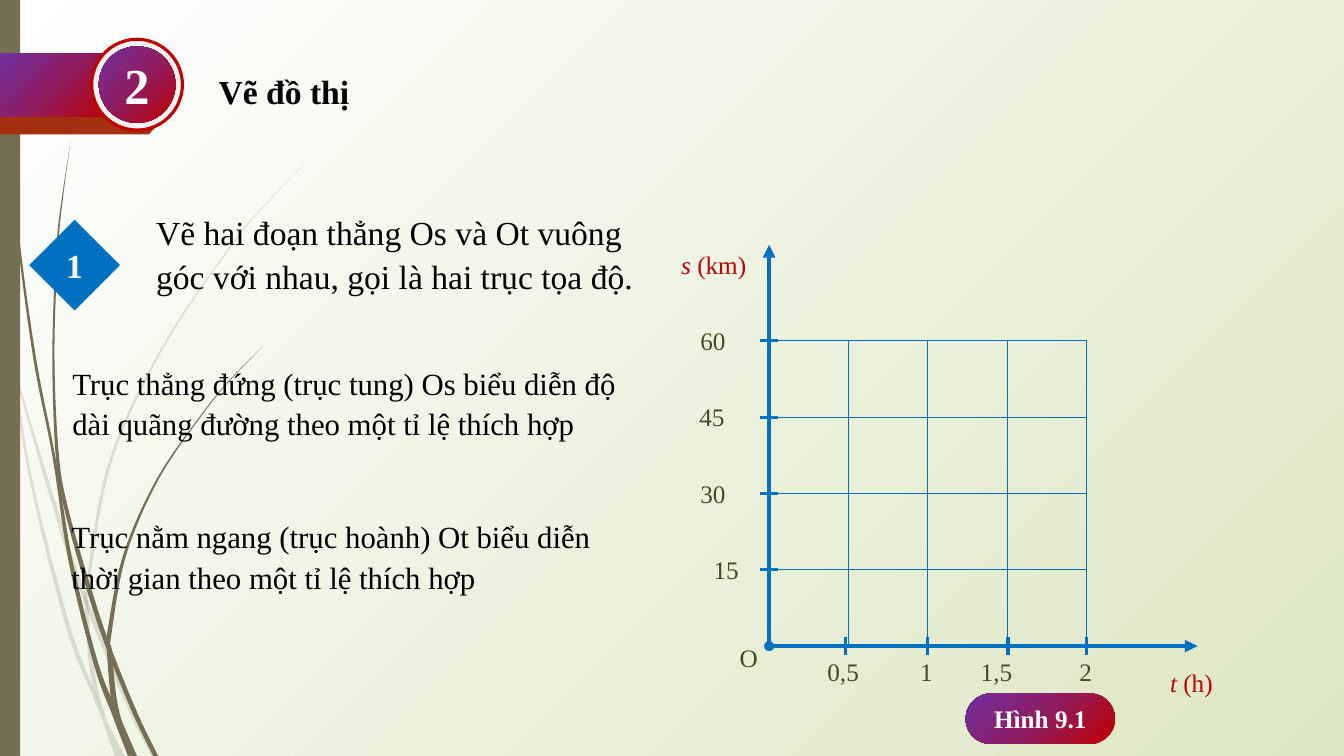
from lxml import etree
from pptx import Presentation
from pptx import util as u
from pptx.dml.color import RGBColor
from pptx.enum import shapes, text
from pptx.oxml.ns import qn

Pt = u.Pt
SHAPE = shapes.MSO_SHAPE
COLORS = {
    "stem": "766F54", "ribbon": "A53010", "blue": "0070C0", "red": "C00000",
    "plum": "8F1D62", "purple": "7030A0", "white": "FFFFFF", "pale": "F2F2F2",
    "black": "000000", "olive": "414C21", "leaf": "DDE6C3",
}
BADGE = [(0, "red"), (51, "plum"), (100, "purple")]

PALE_STEMS = [
    [(0, 203, 0), (7.5, 250, 1), (20.2, 338, 2), (46.8, 447, 3.2), (66.2, 497, 3),
     (73, 514, 3), (82, 540, 7)],
    [(10, 248, 0), (12, 271, 1), (41.8, 376, 3.3), (60.5, 431, 3.2), (88.6, 500, 3.2),
     (108, 540, 3.6)],
    [(224.6, 110, 0), (193, 142, 0.7), (164.2, 176, 1), (113.8, 251, 1.6), (77, 332, 2.2),
     (61.2, 420, 2.2), (60.5, 431, 2.6), (62.6, 465, 2.9), (67, 492, 3), (75, 512, 0.5)],
]
DARK_STEMS = [
    [(2.2, 0, 0.7), (2.9, 35, 0.7), (5, 79, 0.8), (12.2, 168, 1.4), (23.8, 256, 2),
     (37.5, 326, 2), (49, 401, 2.9), (67, 474.5, 3.4), (79.9, 510, 5), (91.4, 540, 6.5)],
    [(50.4, 101.5, 0), (44.6, 139, 0.7), (40.3, 176, 1.4), (37.4, 251, 1.5), (39.6, 323, 2.3),
     (46, 364, 2.9), (63.4, 426, 3.5), (76.3, 464, 3.5), (95, 510, 3.5), (109.4, 540, 3.6)],
    [(187.2, 248, 0), (166.3, 269, 0.6), (146.9, 292, 0.8), (112.3, 341.5, 1.5),
     (87.8, 397, 2.2), (76.3, 454, 3.2), (76.3, 464, 3.5), (79.2, 498, 4), (84.2, 518, 3.5)],
]


def rgb(name):
    return RGBColor.from_string(COLORS[name])


def smooth_curve(points, steps=6):
    padded = [points[0]] + points + [points[-1]]
    curve = [points[0]]
    for a, b, c, d in zip(padded, padded[1:], padded[2:], padded[3:]):
        for i in range(1, steps + 1):
            t = i / steps
            curve.append(tuple(
                (2 * q + (r - p) * t + (2 * p - 5 * q + 4 * r - s) * t ** 2
                 + (3 * q - p - 3 * r + s) * t ** 3) / 2
                for p, q, r, s in zip(a, b, c, d)))
    return curve


class SlideBuilder:
    font = "Times New Roman"

    def __init__(self, slide):
        self.slide = slide
        self.shapes = slide.shapes

    def gradient(self, fill, owner, stops, angle=None):
        fill.gradient()
        grad = next(owner.iter(qn("a:gradFill")))
        for child in list(grad):
            grad.remove(child)
        gs_list = etree.SubElement(grad, qn("a:gsLst"))
        for pos, color in stops:
            gs = etree.SubElement(gs_list, qn("a:gs"), pos=str(pos * 1000))
            etree.SubElement(gs, qn("a:srgbClr"), val=COLORS[color])
        if angle is None:
            way = etree.SubElement(grad, qn("a:path"), path="circle")
            etree.SubElement(way, qn("a:fillToRect"), r="100000", b="100000")
        else:
            etree.SubElement(grad, qn("a:lin"), ang=str(angle * 60000), scaled="0")

    def background(self, stops):
        self.gradient(self.slide.background.fill, self.slide._element, stops)

    def set_text(self, sp, content, size, color, bold=False, align=None, spacing=None, italic=0):
        tf = sp.text_frame
        tf.word_wrap = True
        p = tf.paragraphs[0]
        parts = [content[:italic], content[italic:]] if italic else [content]
        for i, part in enumerate(parts):
            r = p.add_run()
            r.text = part
            r.font.name = self.font
            r.font.size = Pt(size)
            r.font.bold = bold
            r.font.italic = bool(italic) and i == 0
            r.font.color.rgb = rgb(color)
        p.alignment = align or text.PP_ALIGN.LEFT
        if spacing:
            p.line_spacing = spacing

    def title(self, box, content):
        sp = self.shapes.title
        sp.left, sp.top, sp.width, sp.height = map(Pt, box)
        self.set_text(sp, content, 24, "black", bold=True)
        sp.text_frame.vertical_anchor = text.MSO_ANCHOR.TOP
        sp.text_frame.auto_size = text.MSO_AUTO_SIZE.NONE

    def text(self, box, content, size=18, color="olive", **style):
        sp = self.shapes.add_textbox(*map(Pt, box))
        self.set_text(sp, content, size, color, **style)

    def shape(self, kind, box, fill, line=None, content=None, size=18, adjust=None):
        sp = self.shapes.add_shape(kind, *map(Pt, box))
        sp.shadow.inherit = False
        if adjust is not None:
            sp.adjustments[0] = adjust
        if isinstance(fill, list):
            self.gradient(sp.fill, sp._element, fill, 225)
        else:
            sp.fill.solid()
            sp.fill.fore_color.rgb = rgb(fill)
        if line:
            sp.line.color.rgb = rgb(line)
            sp.line.width = Pt(2.25)
        else:
            sp.line.fill.background()
        if content:
            self.set_text(sp, content, size, "white", bold=True, align=text.PP_ALIGN.CENTER)
            sp.text_frame.vertical_anchor = text.MSO_ANCHOR.MIDDLE

    def stem(self, points, alpha=None):
        curve = smooth_curve(points)
        outline = [(x, y) for x, y, w in curve] + [(x + w, y) for x, y, w in reversed(curve)]
        outline = [(Pt(x), Pt(y)) for x, y in outline]
        builder = self.shapes.build_freeform(*outline[0])
        builder.add_line_segments(outline[1:])
        sp = builder.convert_to_shape()
        sp.shadow.inherit = False
        sp.fill.solid()
        sp.fill.fore_color.rgb = rgb("stem")
        sp.line.fill.background()
        if alpha:
            color = next(sp._element.spPr.iter(qn("a:srgbClr")))
            etree.SubElement(color, qn("a:alpha"), val=str(alpha * 1000))

    def line(self, x1, y1, x2, y2, width=2.25, arrow=False):
        cn = self.shapes.add_connector(shapes.MSO_CONNECTOR.STRAIGHT, *map(Pt, (x1, y1, x2, y2)))
        cn.line.color.rgb = rgb("blue")
        cn.line.width = Pt(width)
        if arrow:
            ln = cn._element.spPr.find(qn("a:ln"))
            etree.SubElement(ln, qn("a:tailEnd"), type="triangle")
        etree.SubElement(cn._element.spPr, qn("a:effectLst"))

    def grid(self, left, top, col, row, count):
        table = self.shapes.add_table(
            count, count, *map(Pt, (left, top, col * count, row * count))).table
        table.first_row = table.horz_banding = False
        for i in range(count):
            table.columns[i].width = Pt(col)
            table.rows[i].height = Pt(row)
        for cell in table.iter_cells():
            tc_pr = cell._tc.get_or_add_tcPr()
            for side in ("lnL", "lnR", "lnT", "lnB"):
                ln = etree.SubElement(tc_pr, qn("a:" + side), w=str(int(Pt(0.75))))
                solid = etree.SubElement(ln, qn("a:solidFill"))
                etree.SubElement(solid, qn("a:srgbClr"), val=COLORS["blue"])
            cell.fill.background()


def main():
    prs = Presentation()
    prs.slide_width, prs.slide_height = Pt(960), Pt(540)
    s = SlideBuilder(prs.slides.add_slide(prs.slide_layouts[5]))
    s.background([(0, "white"), (100, "leaf")])
    for points in PALE_STEMS:
        s.stem(points, alpha=20)
    for points in DARK_STEMS:
        s.stem(points)
    s.shape(SHAPE.RECTANGLE, (0, 0, 14.4, 540), "stem")
    s.shape(SHAPE.PENTAGON, (0, 56.2, 125, 39.8), "ribbon", adjust=0.47)

    ox, oy, col, row = 549.4, 461.5, 56.7, 54.5
    s.grid(ox, oy - 4 * row, col, row, 4)

    s.shape(SHAPE.RECTANGLE, (0, 38.2, 79.2, 45.4), BADGE)
    s.shape(SHAPE.OVAL, (65.5, 28.1, 64.8, 64.8), "pale", line="red")
    s.shape(SHAPE.OVAL, (70.6, 33.1, 54.7, 54.7), BADGE, content="2", size=36)
    s.title((149, 46.8, 161.3, 36), "Vẽ đồ thị")
    s.shape(SHAPE.DIAMOND, (20.9, 157, 64.8, 64.8), "blue", content="1", size=24)

    for box, size, content in [
        ((104.4, 144.7, 375, 69), 24,
         "Vẽ hai đoạn thẳng Os và Ot vuông góc với nhau, gọi là hai trục tọa độ."),
        ((44.6, 254.2, 411.8, 64), 22,
         "Trục thẳng đứng (trục tung) Os biểu diễn độ dài quãng đường theo một tỉ lệ thích hợp"),
        ((43.9, 363.6, 396.7, 66), 22,
         "Trục nằm ngang (trục hoành) Ot biểu diễn thời gian theo một tỉ lệ thích hợp"),
    ]:
        s.text(box, content, size, "black", spacing=1.1)

    s.line(ox, oy, ox, 175, 3, arrow=True)
    s.line(ox, oy, 855.4, oy, 3, arrow=True)
    s.shape(SHAPE.OVAL, (ox - 3.6, oy - 3.6, 7.2, 7.2), "blue")
    s.text((521.3, 455, 23.8, 29), "O")
    s.text((828.7, 473, 52.6, 29), "t (h)", color="red", italic=2)
    s.text((479.5, 174.2, 64.8, 29), "s (km)", color="red", italic=2)

    for x, left, label in [(604.1, 583.9, "0,5"), (662.4, 650.2, "1"),
                           (720, 693.4, "1,5"), (776.2, 763.9, "2")]:
        s.line(x, oy - 6.2, x, oy + 6.2)
        s.text((left, 465.1, 2 * (x - left), 29), label)
    for i, left in enumerate([502.6, 493.2, 492.5, 493.2], 1):
        y = oy - i * row
        s.line(ox - 6.5, y, ox + 6.5, y)
        s.text((left, y - 14.6, ox - 6.5 - left, 29), str(15 * i))

    s.shape(SHAPE.ROUNDED_RECTANGLE, (689.8, 495.4, 106.6, 36), BADGE,
            content="Hình 9.1", adjust=0.5)
    prs.save("out.pptx")


if __name__ == "__main__":
    main()
